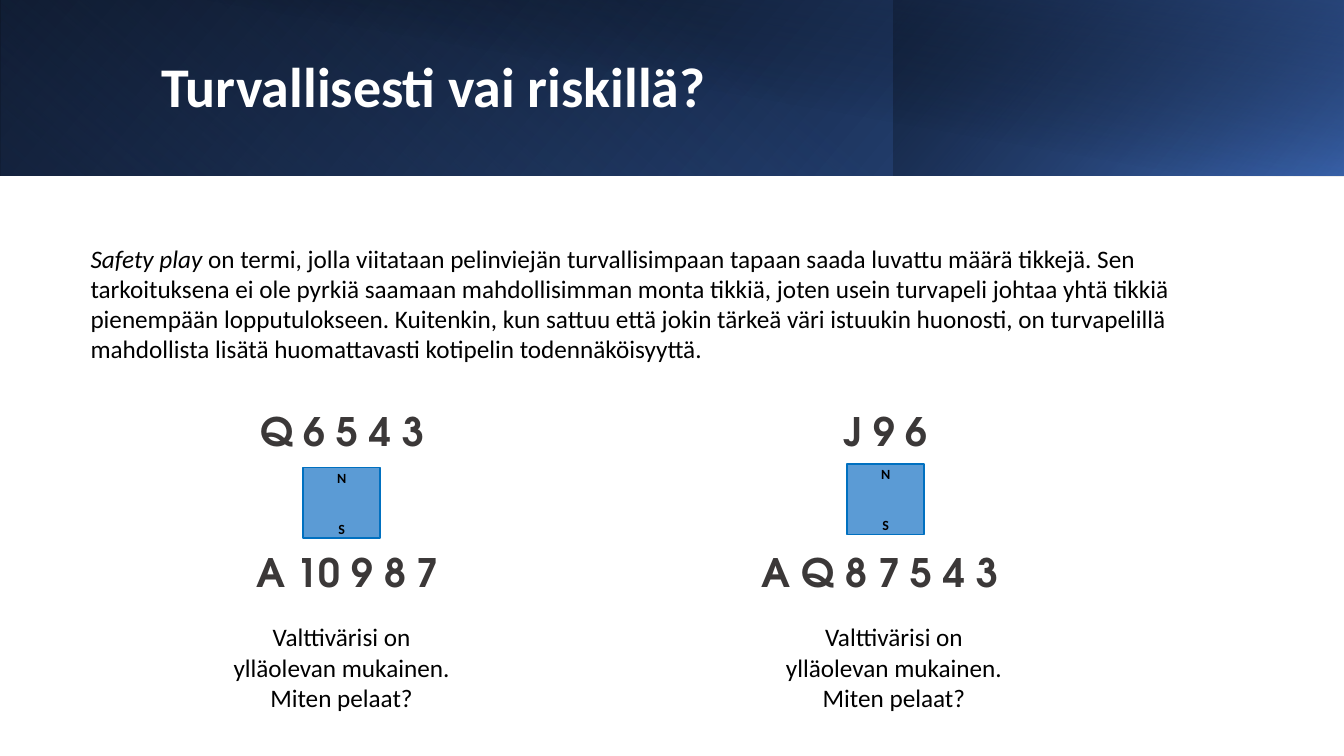
from lxml.etree import SubElement
from pptx import Presentation
from pptx.dml.color import RGBColor
from pptx.enum.shapes import MSO_SHAPE
from pptx.enum.text import MSO_ANCHOR, PP_ALIGN
from pptx.oxml.ns import qn
from pptx.util import Pt

COLORS = {
    "black": "000000", "white": "FFFFFF", "cards": "3B3838",
    "table": "5B9BD5", "table_edge": "0070C0",
    "blue": "4472C4", "mid_blue": "2F5597", "navy": "203864",
}


def add_band(left, width, height, angle, stops, flipped=False, rotation=0):
    """Header rectangle with a linear gradient; stops are (position %, color, opacity %)."""
    band = slide.shapes.add_shape(MSO_SHAPE.RECTANGLE, Pt(left), Pt(0), Pt(width), Pt(height))
    band.shadow.inherit = False
    band.line.fill.background()
    band.rotation = rotation
    if flipped:
        band._element.spPr.find(qn("a:xfrm")).set("flipH", "1")
    band.fill.gradient()
    gradient = band._element.spPr.find(qn("a:gradFill"))
    gradient.find(qn("a:lin")).set("ang", str(angle * 60000))
    stop_list = gradient.find(qn("a:gsLst"))
    for default_stop in list(stop_list):
        stop_list.remove(default_stop)
    for position, color, opacity in stops:
        stop = SubElement(stop_list, qn("a:gs"), pos=str(position * 1000))
        rgb = SubElement(stop, qn("a:srgbClr"), val=COLORS[color])
        SubElement(rgb, qn("a:alpha"), val=str(opacity * 1000))


def add_text(left, top, width, height, paragraphs, size, color="black", font="Calibri",
             bold=False, align=PP_ALIGN.LEFT, gap=0):
    """Text box; each paragraph is a list of (text, italic) runs, gap parts the paragraphs."""
    frame = slide.shapes.add_textbox(Pt(left), Pt(top), Pt(width), Pt(height)).text_frame
    frame.word_wrap = True
    for index, runs in enumerate(paragraphs):
        paragraph = frame.add_paragraph() if index else frame.paragraphs[0]
        paragraph.alignment = align
        if index:
            paragraph.space_before = Pt(gap)
        for text, italic in runs:
            run = paragraph.add_run()
            run.text = text
            run.font.name = font
            run.font.size = Pt(size)
            run.font.bold = bold
            run.font.italic = italic
            run.font.color.rgb = RGBColor.from_string(COLORS[color])
    return frame


presentation = Presentation()
presentation.slide_width, presentation.slide_height = Pt(960), Pt(540)
slide = presentation.slides.add_slide(presentation.slide_layouts[6])

# Header
add_band(0, 960, 125.5, 140, [(0, "black", 100), (100, "mid_blue", 100)], flipped=True)
add_band(0, 639, 125.5, 230, [(20, "blue", 0), (100, "navy", 55)], flipped=True, rotation=180)
add_band(638.5, 321.5, 125.5, 220, [(0, "blue", 66), (100, "black", 30)])
add_band(36, 924, 126, 280, [(50, "black", 0), (99, "navy", 52)])
title = add_text(108, 23, 779, 81.5, [[("Turvallisesti vai riskillä?", False)]],
                 40, "white", bold=True)
title.vertical_anchor = MSO_ANCHOR.MIDDLE
title.paragraphs[0].line_spacing = 0.9

# Definition
add_text(57.6, 170, 847, 94.5, [[
    ("Safety play ", True),
    ("on termi, jolla viitataan pelinviejän turvallisimpaan tapaan saada luvattu määrä tikkejä. "
     "Sen tarkoituksena ei ole pyrkiä saamaan mahdollisimman monta tikkiä, joten usein turvapeli "
     "johtaa yhtä tikkiä pienempään lopputulokseen. Kuitenkin, kun sattuu että jokin tärkeä väri "
     "istuukin huonosti, on turvapelillä mahdollista lisätä huomattavasti kotipelin "
     "todennäköisyyttä.", False),
]], 18)

# Deals: north hand, south hand, centres of hands, table and question, top of table
deals = [
    ("Q 6 5 4 3 ", "A 10 9 8 7", 248.4, 244, 244, 334),
    ("J 9 6", "A Q 8 7 5 4 3 ", 632.6, 632.6, 638.6, 331.4),
]
hand_width, table_width, seat_width, question_width = 221, 55, 36, 171.5
for north, south, hand_center, table_center, question_center, table_top in deals:
    add_text(hand_center - hand_width / 2, 287.3, hand_width, 143.3,
             [[(north, False)], [(south, False)]], 28, "cards", "TeX Gyre Adventor",
             bold=True, align=PP_ALIGN.CENTER, gap=67.2)
    table = slide.shapes.add_shape(MSO_SHAPE.RECTANGLE, Pt(table_center - table_width / 2),
                                   Pt(table_top), Pt(table_width), Pt(50.4))
    table.shadow.inherit = False
    table.fill.solid()
    table.fill.fore_color.rgb = RGBColor.from_string(COLORS["table"])
    table.line.color.rgb = RGBColor.from_string(COLORS["table_edge"])
    table.line.width = Pt(1)
    add_text(table_center - seat_width / 2, table_top - 2.5, seat_width, 55.4,
             [[("N", False)], [("S", False)]], 10, bold=True, align=PP_ALIGN.CENTER, gap=24.4)
    add_text(question_center - question_width / 2, 440.6, question_width, 72.7,
             [[("Valttivärisi on ylläolevan mukainen. Miten pelaat?", False)]],
             18, align=PP_ALIGN.CENTER)

presentation.save("out.pptx")
